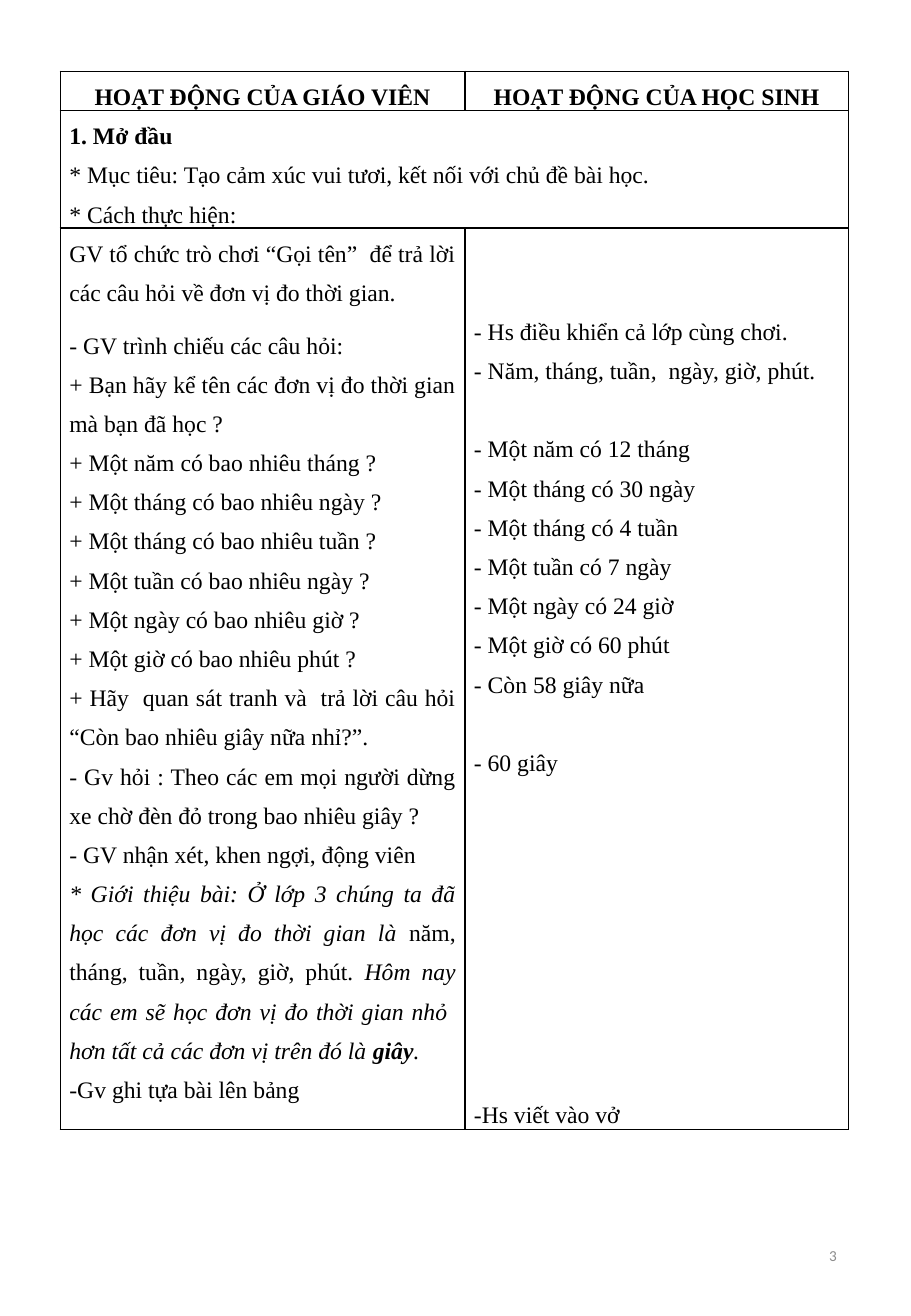
import dataclasses

import pptx
import pptx.dml.color
import pptx.enum.text
import pptx.oxml
import pptx.oxml.ns
import pptx.util

Cm = pptx.util.Cm
Pt = pptx.util.Pt
PP_ALIGN = pptx.enum.text.PP_ALIGN
ANCHOR = pptx.enum.text.MSO_ANCHOR


@dataclasses.dataclass(frozen=True)
class Theme:
    body_font: str = "Times New Roman"
    number_font: str = "Calibri"
    body_size: float = 14
    number_size: float = 9
    ink: str = "000000"
    muted: str = "8C8C8C"
    border: float = 1
    spacing: float = 1.5
    line_height: float = 23.2


@dataclasses.dataclass
class Para:
    """One paragraph; runs are (text, style) pairs, style drawn from "b" and "i"."""
    runs: list
    align: PP_ALIGN = PP_ALIGN.JUSTIFY
    lines_before: int = 0
    after: float = 0


def line(text, style="", **options):
    return Para([(text, style)], **options)


HEADERS = ["HOẠT ĐỘNG CỦA GIÁO VIÊN", "HOẠT ĐỘNG CỦA HỌC SINH"]

OPENING = [
    line("1. Mở đầu", "b"),
    line("* Mục tiêu: Tạo cảm xúc vui tươi, kết nối với chủ đề bài học."),
    line("* Cách thực hiện:"),
]

TEACHER = [
    line("GV tổ chức trò chơi “Gọi tên”  để trả lời các câu hỏi về đơn vị đo thời gian.", after=8),
    line("- GV trình chiếu các câu hỏi:"),
    line("+ Bạn hãy kể tên các đơn vị đo thời gian mà bạn đã học ?"),
    line("+ Một năm có bao nhiêu tháng ?"),
    line("+ Một tháng có bao nhiêu ngày ?"),
    line("+ Một tháng có bao nhiêu tuần ?"),
    line("+ Một tuần có bao nhiêu ngày ?"),
    line("+ Một ngày có bao nhiêu giờ ?"),
    line("+ Một giờ có bao nhiêu phút ?"),
    line("+ Hãy  quan sát tranh và  trả lời câu hỏi “Còn bao nhiêu giây nữa nhỉ?”."),
    line("- Gv hỏi : Theo các em mọi người dừng xe chờ đèn đỏ trong bao nhiêu giây ?"),
    line("- GV nhận xét, khen ngợi, động viên"),
    Para([
        ("* Giới thiệu bài: Ở lớp 3 chúng ta đã học các đơn vị đo thời gian là ", "i"),
        ("năm, tháng, tuần", ""),
        (", ", "i"),
        ("ngày, giờ, phút", ""),
        (". Hôm nay các em sẽ học đơn vị đo thời gian nhỏ  hơn tất cả các đơn vị trên đó là ", "i"),
        ("giây", "bi"),
        (".", "i"),
    ]),
    line("-Gv ghi tựa bài lên bảng"),
]

PUPILS = [
    line("- Hs điều khiển cả lớp cùng chơi."),
    Para([
        ("- ", "i"),
        ("Năm, tháng, tuần", ""),
        (",  ", "i"),
        ("ngày, giờ, phút", ""),
        (".", "i"),
    ]),
    line("- Một năm có 12 tháng", lines_before=1),
    line("- Một tháng có 30 ngày"),
    line("- Một tháng có 4 tuần"),
    line("- Một tuần có 7 ngày"),
    line("- Một ngày có 24 giờ"),
    line("- Một giờ có 60 phút"),
    line("- Còn 58 giây nữa"),
    line("- 60 giây", lines_before=1),
    line("-Hs viết vào vở", lines_before=8),
]


class LessonSlide:
    """Holds the theme and the slide being filled."""

    def __init__(self, prs, theme):
        self.theme = theme
        self.slide = prs.slides.add_slide(prs.slide_layouts[6])

    def style_font(self, font, name, size, color):
        font.name = name
        font.size = Pt(size)
        font.color.rgb = pptx.dml.color.RGBColor.from_string(color)

    def add_paras(self, tf, paras):
        for i, para in enumerate(paras):
            p = tf.paragraphs[0] if i == 0 else tf.add_paragraph()
            p.alignment = para.align
            p.line_spacing = self.theme.spacing
            p.space_before = Pt(para.lines_before * self.theme.line_height)
            p.space_after = Pt(para.after)
            self.style_font(p.font, self.theme.body_font, self.theme.body_size, self.theme.ink)
            for text, style in para.runs:
                r = p.add_run()
                r.text = text
                r.font.bold = "b" in style
                r.font.italic = "i" in style

    def outline(self, cell):
        tc_pr = cell._tc.get_or_add_tcPr()
        for i, side in enumerate(("lnL", "lnR", "lnT", "lnB")):
            tc_pr.insert(i, pptx.oxml.parse_xml(
                f'<a:{side} {pptx.oxml.ns.nsdecls("a")} w="{Pt(self.theme.border)}">'
                f'<a:solidFill><a:srgbClr val="{self.theme.ink}"/></a:solidFill></a:{side}>'))

    def table(self, left, top, widths, heights):
        frame = self.slide.shapes.add_table(
            len(heights), len(widths), Cm(left), Cm(top), Cm(sum(widths)), Cm(sum(heights)))
        table = frame.table
        table.first_row = table.horz_banding = False
        for column, width in zip(table.columns, widths):
            column.width = Cm(width)
        for row, height in zip(table.rows, heights):
            row.height = Cm(height)
        for cell in table.iter_cells():
            cell.fill.background()
            self.outline(cell)
        return table

    def fill_cell(self, cell, paras, anchor=ANCHOR.TOP, lines_above=0):
        cell.margin_left = cell.margin_right = Cm(0.19)
        cell.margin_top = Pt(lines_above * self.theme.line_height)
        cell.margin_bottom = 0
        cell.vertical_anchor = anchor
        self.add_paras(cell.text_frame, paras)

    def page_number(self, text, left, top, width, height):
        sp = self.slide.shapes.add_textbox(Cm(left), Cm(top), Cm(width), Cm(height))
        tf = sp.text_frame
        tf.word_wrap = True
        tf.vertical_anchor = ANCHOR.MIDDLE
        p = tf.paragraphs[0]
        p.text = text
        p.alignment = PP_ALIGN.RIGHT
        self.style_font(p.font, self.theme.number_font, self.theme.number_size, self.theme.muted)


def main():
    prs = pptx.Presentation()
    prs.slide_width, prs.slide_height = Cm(19.05), Cm(27.51)
    s = LessonSlide(prs, Theme())

    table = s.table(1.26, 1.49, widths=[8.46, 8.02], heights=[0.82, 2.45, 18.84])
    for column, header in enumerate(HEADERS):
        s.fill_cell(table.cell(0, column), [line(header, "b", align=PP_ALIGN.CENTER)], ANCHOR.MIDDLE)
    table.cell(1, 0).merge(table.cell(1, 1))
    s.fill_cell(table.cell(1, 0), OPENING, ANCHOR.MIDDLE)
    s.fill_cell(table.cell(2, 0), TEACHER)
    s.fill_cell(table.cell(2, 1), PUPILS, lines_above=2)

    s.page_number("3", 13.46, 25.5, 4.29, 1.47)
    prs.save("out.pptx")


if __name__ == "__main__":
    main()
